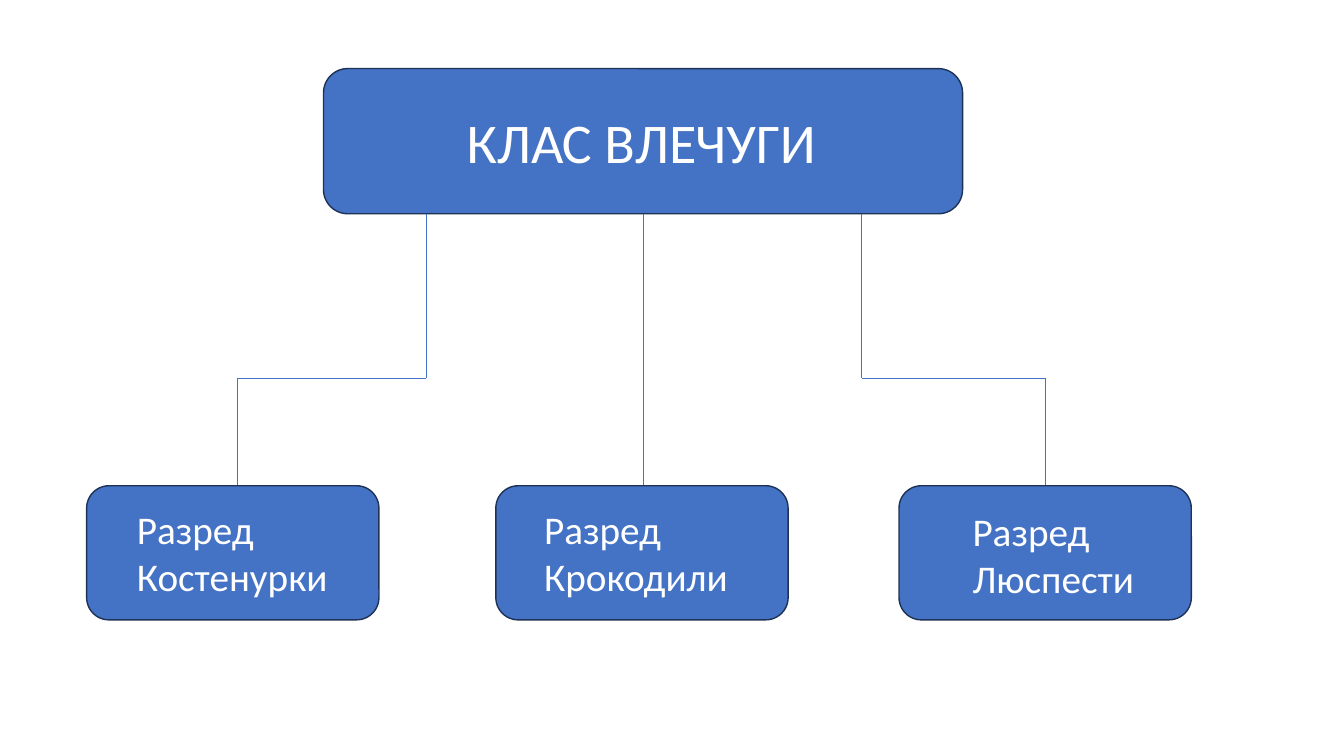
from lxml import etree
from pptx import Presentation
from pptx.dml.color import RGBColor
from pptx.enum.shapes import MSO_CONNECTOR, MSO_SHAPE
from pptx.enum.text import MSO_ANCHOR, PP_ALIGN
from pptx.oxml.ns import qn
from pptx.util import Pt

ROUND = MSO_SHAPE.ROUNDED_RECTANGLE
LINE = MSO_CONNECTOR.STRAIGHT
LEFT = PP_ALIGN.LEFT
TOP = MSO_ANCHOR.TOP
FONT = "Calibri"
HUES = {"fill": "4472C4", "edge": "1E3256", "text": "FFFFFF"}

CLASS = (231.1, 49, 456.5, 103.7)
ROW = 347
WIDE, HIGH = 208.8, 95.8
FORK = 270
ORDERS = [
    ("Разред Костенурки", 61.9, (28.8, 10.1, 219.6), 304.6, 169.9),
    ("Разред Крокодили", 354.2, (27.4, 10.1, 197.3), 459.4, 459.4),
    ("Разред Люспести", 642.2, (45.4, 11.5, 205.2), 615.6, 746.6),
]


def hue(name):
    return RGBColor.from_string(HUES[name])


def panel(slide, box):
    shape = slide.shapes.add_shape(ROUND, *map(Pt, box))
    shape.shadow.inherit = False
    shape.fill.solid()
    shape.fill.fore_color.rgb = hue("fill")
    shape.line.color.rgb = hue("edge")
    shape.line.width = Pt(1)


def write(shape, text, size):
    frame = shape.text_frame
    frame.word_wrap = True
    frame.vertical_anchor = TOP
    para = frame.paragraphs[0]
    para.alignment = LEFT
    para.line_spacing = 1.0
    run = para.add_run()
    run.text = text
    run.font.name = FONT
    run.font.size = Pt(size)
    run.font.color.rgb = hue("text")


def head(slide, box):
    x, y, w, h = box
    panel(slide, box)
    title = slide.shapes.title
    title.left, title.top = Pt(x + 95), Pt(y + 24.4)
    title.width, title.height = Pt(w - 187), Pt(h - 48)
    write(title, "КЛАС ВЛЕЧУГИ", 40)
    title.element.getparent().append(title.element)


def order(slide, box, text, inset):
    x, y, w, h = box
    dx, dy, wide = inset
    panel(slide, box)
    label = slide.shapes.add_textbox(Pt(x + dx), Pt(y + dy), Pt(wide), Pt(h - 21))
    write(label, text, 28)


def link(slide, start, end, top, low):
    if start == end:
        points = [(start, top), (end, low)]
    else:
        points = [(start, top), (start, FORK), (end, FORK), (end, low)]
    for (x1, y1), (x2, y2) in zip(points, points[1:]):
        line = slide.shapes.add_connector(LINE, Pt(x1), Pt(y1), Pt(x2), Pt(y2))
        line.line.color.rgb = hue("fill")
        line.line.width = Pt(0.5)
        etree.SubElement(line.element.spPr, qn("a:effectLst"))


def tree(slide):
    head(slide, CLASS)
    for text, x, inset, start, end in ORDERS:
        link(slide, start, end, CLASS[1] + CLASS[3], ROW)
        order(slide, (x, ROW, WIDE, HIGH), text, inset)


def main():
    deck = Presentation()
    deck.slide_width, deck.slide_height = Pt(960), Pt(540)
    tree(deck.slides.add_slide(deck.slide_layouts[5]))
    deck.save("out.pptx")


if __name__ == "__main__":
    main()
